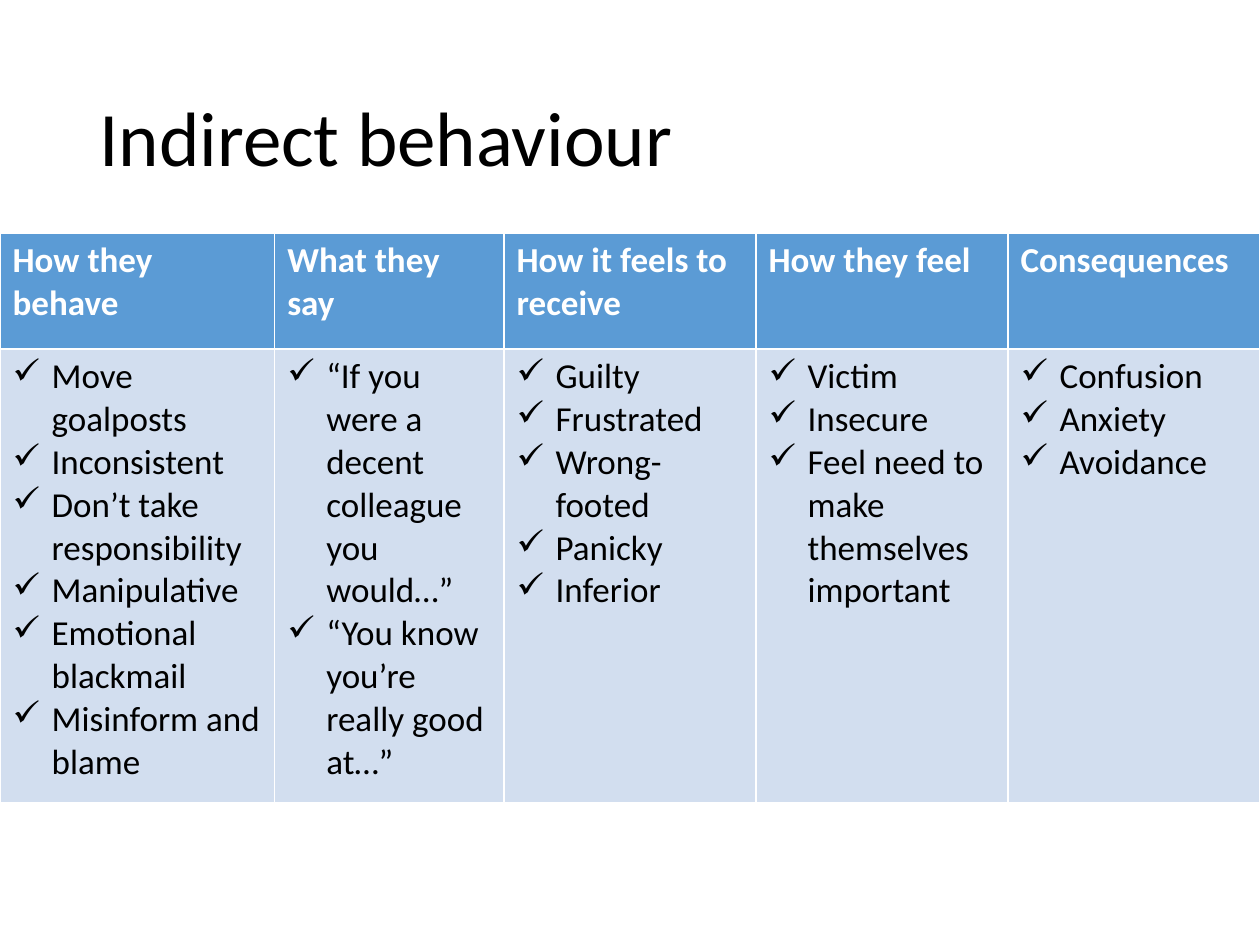
from lxml import etree
from pptx import Presentation
from pptx.dml.color import RGBColor
from pptx.enum import text
from pptx.oxml.ns import qn
from pptx.util import Inches, Pt

COLORS = {"text": "000000", "header": "5B9BD5", "header_text": "FFFFFF", "body": "D2DEEF"}
COLUMNS = [
    (2.18, "How they behave", ["Move goalposts", "Inconsistent", "Don’t take responsibility",
                               "Manipulative", "Emotional blackmail", "Misinform and blame"]),
    (1.82, "What they say", ["“If you were a decent colleague you would…”",
                             "“You know you’re really good at…”"]),
    (2, "How it feels to receive", ["Guilty", "Frustrated", "Wrong-footed", "Panicky", "Inferior"]),
    (2, "How they feel", ["Victim", "Insecure", "Feel need to make themselves important"]),
    (2, "Consequences", ["Confusion", "Anxiety", "Avoidance"]),
]
ROWS = [0.92, 3.6]
INDENT = Inches(0.31)


def write(frame, lines, size=20, color="text", bold=False, bullet=None, spacing=None):
    for index, line in enumerate(lines):
        paragraph = frame.paragraphs[0] if index == 0 else frame.add_paragraph()
        paragraph.alignment = text.PP_ALIGN.LEFT
        paragraph.line_spacing = spacing
        run = paragraph.add_run()
        run.text = line
        run.font.name = "Calibri"
        run.font.size = Pt(size)
        run.font.bold = bold
        run.font.color.rgb = RGBColor.from_string(COLORS[color])
        if bullet:
            properties = paragraph._p.get_or_add_pPr()
            properties.set("marL", str(INDENT))
            properties.set("indent", str(-INDENT))
            etree.SubElement(properties, qn("a:buChar")).set("char", bullet)


presentation = Presentation()
presentation.slide_width = Inches(10)
presentation.slide_height = Inches(7.5)
slide = presentation.slides.add_slide(presentation.slide_layouts[5])

title = slide.shapes.title
title.left, title.top, title.width, title.height = map(Inches, (0.69, 0.4, 8.62, 1.45))
title.text_frame.vertical_anchor = text.MSO_ANCHOR.MIDDLE
write(title.text_frame, ["Indirect behaviour"], size=44, spacing=0.9)

table = slide.shapes.add_table(
    len(ROWS), len(COLUMNS), 0, Inches(1.85), presentation.slide_width, Inches(sum(ROWS))
).table
for row, height in zip(table.rows, ROWS):
    row.height = Inches(height)

for index, (width, heading, points) in enumerate(COLUMNS):
    table.columns[index].width = Inches(width)
    header, body = table.cell(0, index), table.cell(1, index)
    for cell, fill in ((header, "header"), (body, "body")):
        cell.fill.solid()
        cell.fill.fore_color.rgb = RGBColor.from_string(COLORS[fill])
    write(header.text_frame, [heading], color="header_text", bold=True)
    write(body.text_frame, points, bullet="✓")

presentation.save("out.pptx")
